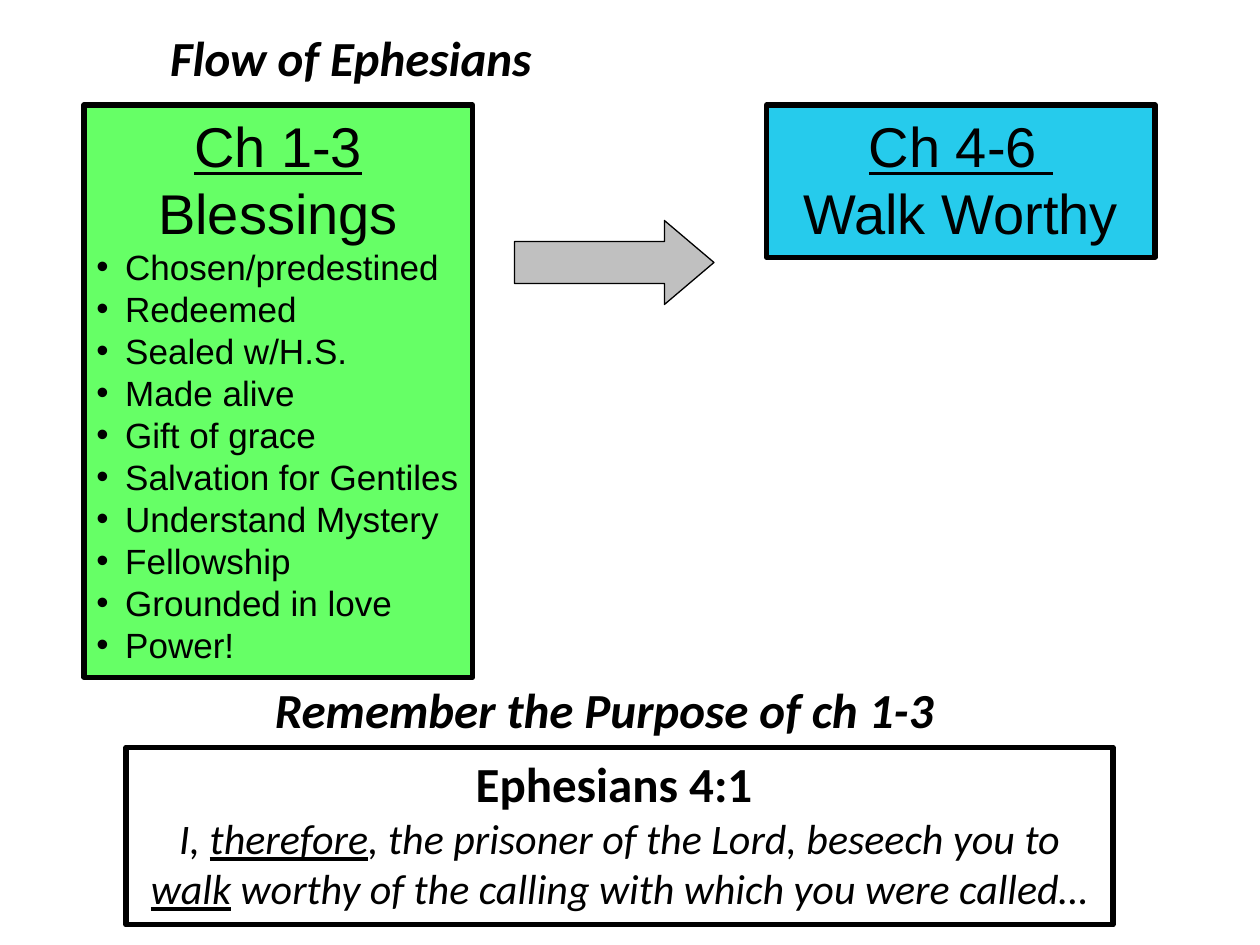
"""Build the Flow of Ephesians slide."""
from lxml.etree import SubElement
from pptx import Presentation
from pptx.dml.color import RGBColor
from pptx.enum.shapes import MSO_SHAPE as Shape
from pptx.enum.text import MSO_ANCHOR as Anchor, MSO_AUTO_SIZE as AutoSize, PP_ALIGN as Align
from pptx.oxml.ns import qn
from pptx.util import Pt


def add_block(kind, left, top, width, height, fill, line_width):
    block = slide.shapes.add_shape(kind, Pt(left), Pt(top), Pt(width), Pt(height))
    block.shadow.inherit = False
    block.fill.solid()
    block.fill.fore_color.rgb = RGBColor.from_string(fill)
    block.line.color.rgb = RGBColor.from_string("000000")
    block.line.width = Pt(line_width)
    return block


def write(box, lines, font_name, align):
    frame = box.text_frame
    frame.word_wrap = True
    frame.auto_size = AutoSize.NONE
    frame.vertical_anchor = Anchor.TOP
    for index, (size, style, pieces) in enumerate(lines):
        para = frame.add_paragraph() if index else frame.paragraphs[0]
        para.alignment = align
        for text, underlined in pieces:
            span = para.add_run()
            span.text = text
            font = span.font
            font.name, font.size = font_name, Pt(size)
            font.bold, font.italic = "b" in style, "i" in style
            font.underline = underlined
            font.color.rgb = RGBColor.from_string("000000")


deck = Presentation()
deck.slide_width, deck.slide_height = Pt(720), Pt(540)
slide = deck.slides.add_slide(deck.slide_layouts[5])

title = slide.shapes.title
title.left, title.top, title.width, title.height = Pt(90), Pt(12), Pt(504), Pt(41)
write(title, [(28, "bi", [("Flow of Ephesians", False)])], "Calibri", Align.LEFT)

chapters = [
    (48, 327, "66FF66", "Ch 1-3", "Blessings"),
    (438, 87, "26CBEC", "Ch 4-6 ", "Walk Worthy"),
]
boxes = []
for left, height, fill, heading, theme in chapters:
    box = add_block(Shape.RECTANGLE, left, 60, 222, height, fill, 3)
    write(box, [(32, "", [(heading, True)]), (32, "", [(theme, False)])], "Arial", Align.CENTER)
    boxes.append(box)

blessings = [
    "Chosen/predestined", "Redeemed", "Sealed w/H.S.", "Made alive", "Gift of grace",
    "Salvation for Gentiles", "Understand Mystery", "Fellowship", "Grounded in love", "Power!",
]
for blessing in blessings:
    para = boxes[0].text_frame.add_paragraph()
    para.text = blessing
    para.alignment = Align.LEFT
    properties = para._p.get_or_add_pPr()
    properties.set("marL", str(Pt(16.5)))
    properties.set("indent", str(-Pt(16.5)))
    SubElement(properties, qn("a:buFont"), typeface="Arial")
    SubElement(properties, qn("a:buChar"), char="•")
    font = para.runs[0].font
    font.name, font.size = "Arial", Pt(20)
    font.color.rgb = RGBColor.from_string("000000")

arrow = add_block(Shape.RIGHT_ARROW, 294, 126, 114, 48, "C0C0C0", 0.75)
arrow.adjustments[0], arrow.adjustments[1] = 0.5, 0.59

reminder = slide.shapes.add_textbox(Pt(150), Pt(385), Pt(504), Pt(41))
write(reminder, [(28, "bi", [("Remember the Purpose of ch 1-3", False)])], "Calibri", Align.LEFT)

verse = add_block(Shape.RECTANGLE, 72, 427, 564, 101.5, "FFFFFF", 3)
write(verse, [
    (28, "b", [("Ephesians 4:1 ", False)]),
    (24, "i", [
        ("I, ", False), ("therefore", True),
        (", the prisoner of the Lord, beseech you to ", False), ("walk", True),
        (" worthy of the calling with which you were called…", False),
    ]),
], "Calibri", Align.CENTER)

deck.save("out.pptx")
